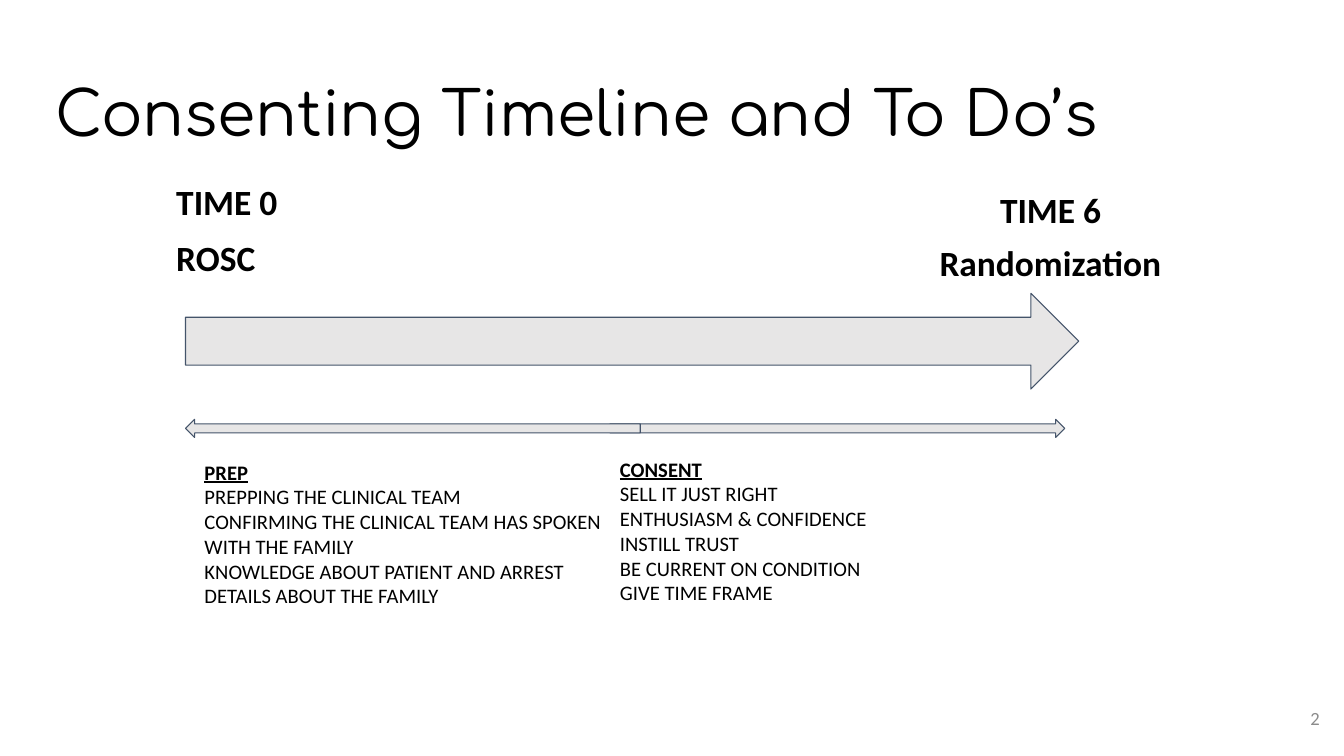
from pptx import Presentation
from pptx.dml.color import RGBColor
from pptx.enum.shapes import MSO_SHAPE as Shape
from pptx.enum.text import MSO_ANCHOR as Anchor, MSO_AUTO_SIZE as AutoSize, PP_ALIGN as Align
from pptx.util import Pt

PX = 9144  # EMU per px, 100 px to the inch
COLORS = {"ink": "000000", "number": "8C8C8C", "arrow": "E7E6E6", "outline": "44546A"}

PREP = [
    "PREPPING THE CLINICAL TEAM",
    "CONFIRMING THE CLINICAL TEAM HAS SPOKEN WITH THE FAMILY",
    "KNOWLEDGE ABOUT PATIENT AND ARREST",
    "DETAILS ABOUT THE FAMILY",
]
CONSENT = [
    "SELL IT JUST RIGHT",
    "ENTHUSIASM & CONFIDENCE",
    "INSTILL TRUST",
    "BE CURRENT ON CONDITION",
    "GIVE TIME FRAME",
]


def color(name):
    return RGBColor.from_string(COLORS[name])


def px(*lengths):
    return [length * PX for length in lengths]


def write(paragraph, text, size, font="Calibri", ink="ink", bold=False,
          underline=False, align=Align.LEFT):
    paragraph.alignment = align
    run = paragraph.add_run()
    run.text = text
    run.font.name = font
    run.font.size = Pt(size)
    run.font.bold = bold
    run.font.underline = underline
    run.font.color.rgb = color(ink)


def set_frame(frame, anchor=Anchor.TOP, inset_y=10):
    frame.word_wrap = True
    frame.auto_size = AutoSize.NONE
    frame.vertical_anchor = anchor
    frame.margin_left, frame.margin_right = px(10, 10)
    frame.margin_top, frame.margin_bottom = px(inset_y, inset_y)


def add_text(slide, box, **frame_format):
    frame = slide.shapes.add_textbox(*px(*box)).text_frame
    set_frame(frame, **frame_format)
    return frame


def add_title(slide, text, box):
    title = slide.shapes.title
    title.left, title.top, title.width, title.height = px(*box)
    set_frame(title.text_frame, anchor=Anchor.MIDDLE, inset_y=5)
    write(title.text_frame.paragraphs[0], text, 44, font="Comfortaa")


def add_arrow(slide, box, rotation=0):
    arrow = slide.shapes.add_shape(Shape.RIGHT_ARROW, *px(*box))
    arrow.rotation = rotation
    arrow.shadow.inherit = False
    arrow.fill.solid()
    arrow.fill.fore_color.rgb = color("arrow")
    arrow.line.color.rgb = color("outline")
    arrow.line.width = Pt(0.75)


def add_milestone(slide, text, box):
    write(add_text(slide, box).paragraphs[0], text, 25.3, bold=True)


def add_todo(slide, heading, tasks, box):
    frame = add_text(slide, box)
    write(frame.paragraphs[0], heading, 14.7, bold=True, underline=True)
    for task in tasks:
        write(frame.add_paragraph(), task, 14.7)


def main():
    deck = Presentation()
    deck.slide_width, deck.slide_height = px(1333, 750)
    slide = deck.slides.add_slide(deck.slide_layouts[5])

    # Title and slide number
    add_title(slide, "Consenting Timeline and To Do’s", (45, 65, 1242, 91))
    number = add_text(slide, (1239, 684, 80, 57), anchor=Anchor.MIDDLE, inset_y=5)
    write(number.paragraphs[0], "2", 13.3, ink="number", align=Align.RIGHT)

    # Timeline, with its two phases pointing outwards
    add_arrow(slide, (184, 291, 886, 95))
    add_arrow(slide, (605, 416, 451, 18))
    add_arrow(slide, (184, 416, 451, 18), rotation=180)

    # Start and end of the timeline
    add_milestone(slide, "TIME 0", (165, 169, 126, 63))
    add_milestone(slide, "ROSC", (165, 224, 126, 63))
    add_milestone(slide, "TIME 6", (982, 177, 126, 63))
    add_milestone(slide, "Randomization", (922, 229, 246, 63))

    # To-do list of each phase
    add_todo(slide, "PREP", PREP, (193, 446, 434, 193))
    add_todo(slide, "CONSENT", CONSENT, (605, 443, 300, 168))

    deck.save("out.pptx")


if __name__ == "__main__":
    main()
